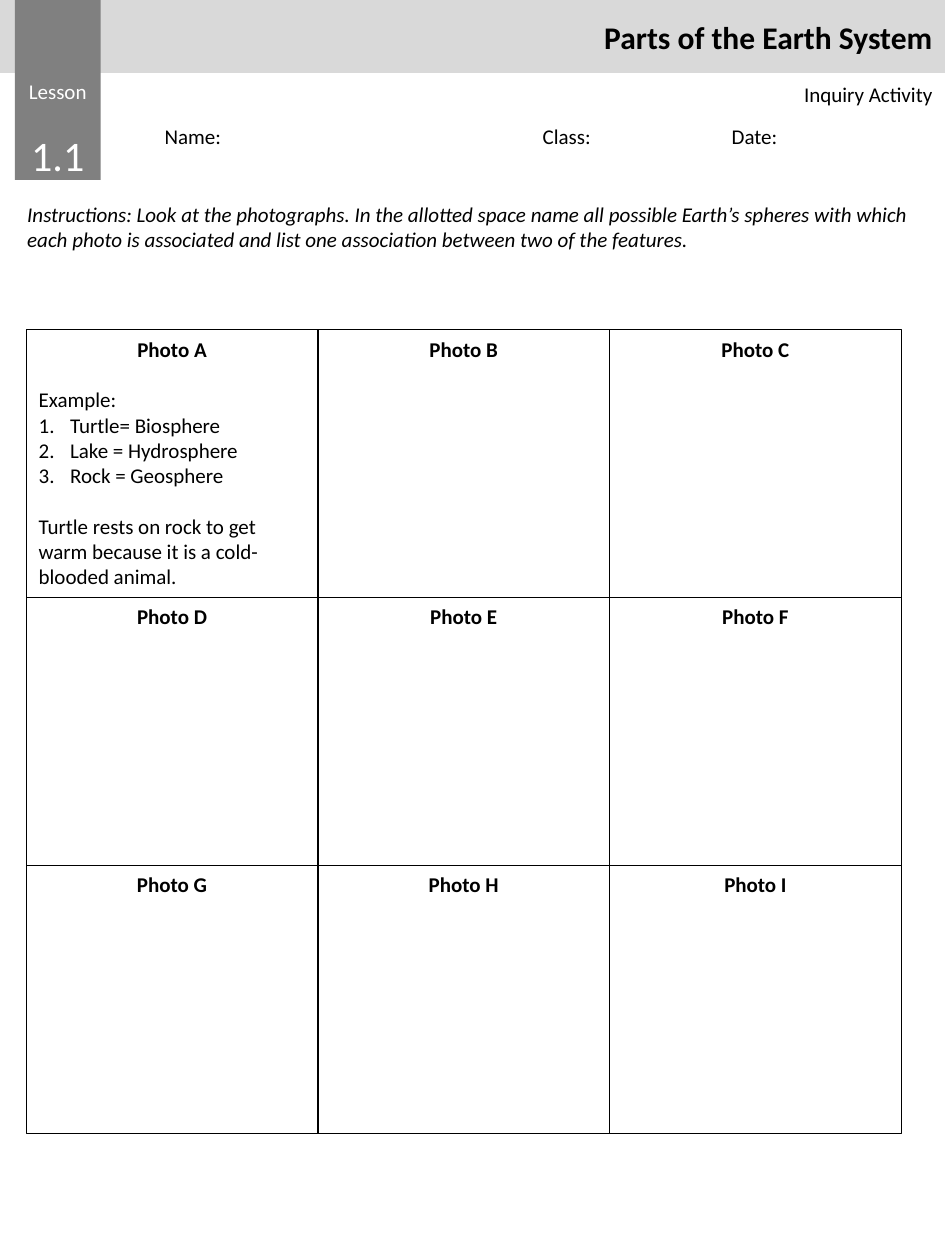
"""Build the Earth system inquiry worksheet."""
from lxml.etree import SubElement
from pptx import Presentation
from pptx.dml.color import RGBColor
from pptx.enum.shapes import MSO_SHAPE
from pptx.enum.text import MSO_ANCHOR, PP_ALIGN
from pptx.oxml.ns import qn
from pptx.util import Cm, Pt

BLACK = RGBColor(0, 0, 0)
WHITE = RGBColor(255, 255, 255)
LIGHT_GRAY = RGBColor(0xD9, 0xD9, 0xD9)
GRAY = RGBColor(0x80, 0x80, 0x80)
LINE_HEIGHT = Pt(14.65)

deck = Presentation()
deck.slide_width, deck.slide_height = Cm(19.05), Cm(25.4)
page = deck.slides.add_slide(deck.slide_layouts[6])


def add_rectangle(left, top, width, height, fill=None, line=None):
    box = page.shapes.add_shape(MSO_SHAPE.RECTANGLE, left, top, width, height)
    box.shadow.inherit = False
    if fill is None:
        box.fill.background()
    else:
        box.fill.solid()
        box.fill.fore_color.rgb = fill
    if line is None:
        box.line.fill.background()
    else:
        box.line.color.rgb = line
        box.line.width = Pt(0.75)
    return box


def add_text(frame, text, align=PP_ALIGN.LEFT, size=12, color=BLACK, bold=False, italic=False, before=0):
    para = frame.paragraphs[0]
    if para.runs:
        para = frame.add_paragraph()
    para.alignment = align
    if before:
        para.space_before = before
    span = para.add_run()
    span.text = text
    span.font.name = "Calibri"
    span.font.size = Pt(size)
    span.font.color.rgb = color
    span.font.bold = bold
    span.font.italic = italic
    return para


banner = add_rectangle(0, 0, Cm(19.05), Cm(1.47), LIGHT_GRAY)
add_text(banner.text_frame, "Parts of the Earth System", PP_ALIGN.RIGHT, 18, bold=True)

lesson = add_rectangle(Cm(0.3), 0, Cm(1.73), Cm(3.63), GRAY).text_frame
lesson.vertical_anchor = MSO_ANCHOR.BOTTOM
lesson.margin_bottom = 0
add_text(lesson, "Lesson", PP_ALIGN.CENTER, color=WHITE)
add_text(lesson, "1.1", PP_ALIGN.CENTER, 24, WHITE, before=LINE_HEIGHT)

instructions = (
    "Instructions: Look at the photographs. In the allotted space name all possible Earth’s spheres "
    "with which each photo is associated and list one association between two of the features."
)
frames = []
for left, top, width, height in [
    (3.07, 2.36, 15.98, 0.77),
    (0.3, 3.94, 18.75, 1.28),
    (3.07, 1.52, 15.98, 0.77),
]:
    box = page.shapes.add_textbox(Cm(left), Cm(top), Cm(width), Cm(height))
    box.text_frame.word_wrap = True
    frames.append(box.text_frame)
student, guide, activity = frames
para = add_text(student, "Name:\tClass:\tDate:")
tabs = SubElement(para._p.get_or_add_pPr(), qn("a:tabLst"))
for stop in (7.62, 11.43):
    SubElement(tabs, qn("a:tab"), pos=str(Cm(stop)), algn="l")
add_text(guide, instructions, italic=True)
add_text(activity, "Inquiry Activity", PP_ALIGN.RIGHT)

photos = []
for index, letter in enumerate("ABCDEFGHI"):
    row, column = divmod(index, 3)
    photo = add_rectangle(
        Cm(0.53 + 5.88 * column), Cm(6.65 + 5.4 * row), Cm(5.88), Cm(5.4), line=BLACK
    ).text_frame
    photo.vertical_anchor = MSO_ANCHOR.TOP
    add_text(photo, f"Photo {letter}", PP_ALIGN.CENTER, bold=True)
    photos.append(photo)

example = photos[0]
add_text(example, "Example:", before=LINE_HEIGHT)
for answer in ("Turtle= Biosphere", "Lake = Hydrosphere", "Rock = Geosphere"):
    properties = add_text(example, answer)._p.get_or_add_pPr()
    properties.set("marL", str(Cm(0.635)))
    properties.set("indent", str(-Cm(0.635)))
    SubElement(properties, qn("a:buFont"), typeface="+mj-lt")
    SubElement(properties, qn("a:buAutoNum"), type="arabicPeriod")
add_text(
    example,
    "Turtle rests on rock to get warm because it is a cold-blooded animal.",
    before=LINE_HEIGHT,
)

deck.save("out.pptx")
